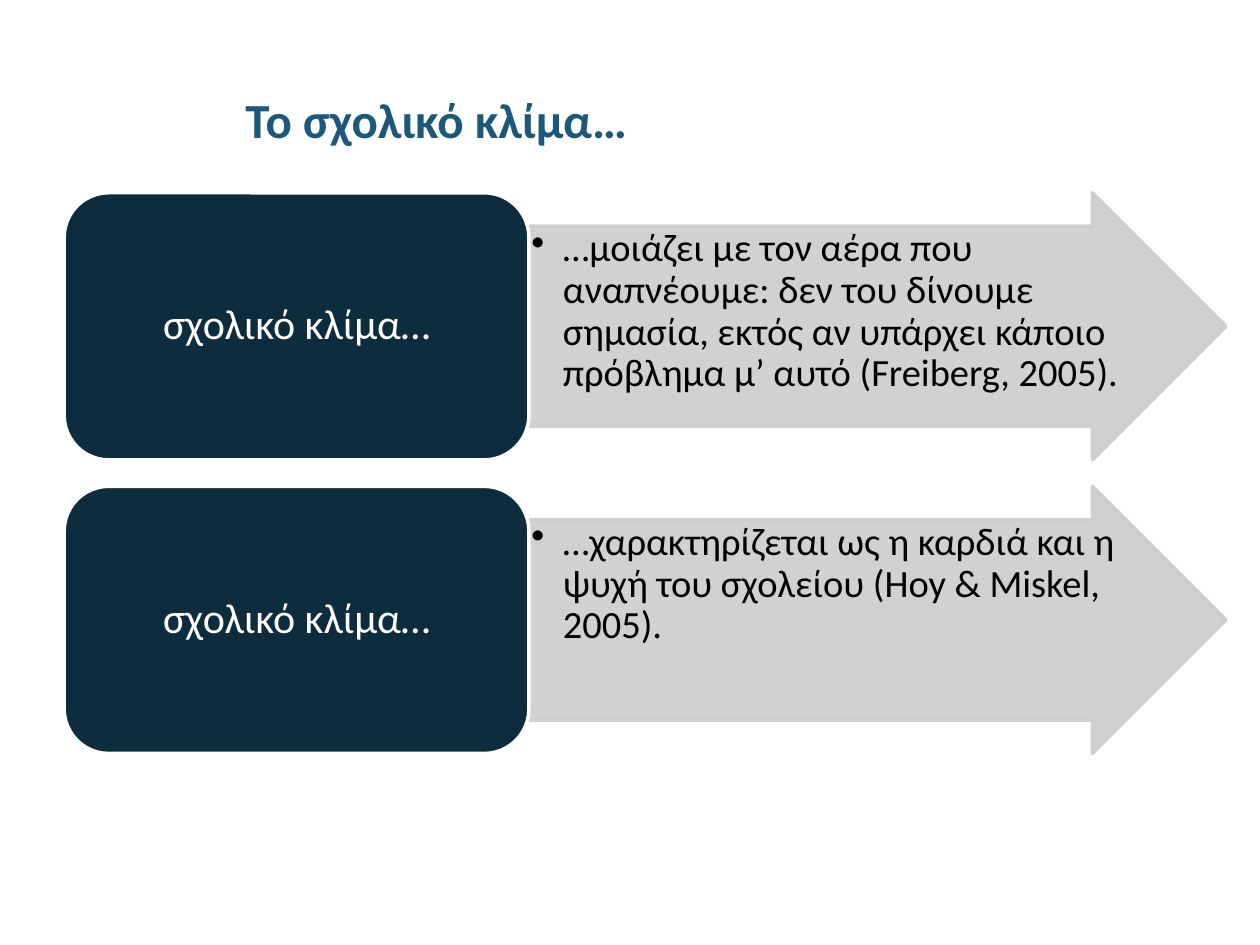
from dataclasses import dataclass
from lxml.etree import SubElement
from pptx import Presentation
from pptx.dml.color import RGBColor
from pptx.enum.shapes import MSO_SHAPE
from pptx.enum.text import MSO_ANCHOR, PP_ALIGN
from pptx.oxml.ns import qn
from pptx.util import Inches, Pt


@dataclass(frozen=True)
class Theme:
    """Hold the colours and type sizes of the slide."""
    font: str = "Calibri"
    title: str = "1B587C"
    navy: str = "0D2C3E"
    grey: str = "CCCDCE"
    white: str = "FFFFFF"
    black: str = "000000"
    head: int = 28
    label: int = 24
    body: int = 22
    edge: int = 2


THEME = Theme()
LABEL = "σχολικό κλίμα…"
ROWS = [
    "…μοιάζει με τον αέρα που αναπνέουμε: δεν του δίνουμε σημασία, "
    "εκτός αν υπάρχει κάποιο πρόβλημα μ’ αυτό (Freiberg, 2005).",
    "…χαρακτηρίζεται ως η καρδιά και η ψυχή του σχολείου (Hoy & Miskel, 2005).",
]


def write(shape, text, size, color, align, anchor, bold=False):
    """Fill a shape with one styled paragraph and return it."""
    frame = shape.text_frame
    frame.word_wrap = True
    frame.vertical_anchor = anchor
    frame.text = text
    para = frame.paragraphs[0]
    para.alignment = align
    font = para.runs[0].font
    font.name, font.size, font.bold = THEME.font, Pt(size), bold
    font.color.rgb = RGBColor.from_string(color)
    return para


def block(slide, kind, box, fill, line):
    """Add a flat preset shape."""
    shape = slide.shapes.add_shape(kind, *map(Inches, box))
    shape.shadow.inherit = False
    shape.fill.solid()
    shape.fill.fore_color.rgb = RGBColor.from_string(fill)
    shape.line.color.rgb = RGBColor.from_string(line)
    shape.line.width = Pt(THEME.edge)
    return shape


def fade(shape, share):
    """Make the fill and line of a shape partly opaque."""
    for color in shape.element.spPr.iter(qn("a:srgbClr")):
        SubElement(color, qn("a:alpha"), val=str(share * 1000))


def bullet(para, indent):
    """Give a paragraph a hanging round bullet."""
    props = para._p.get_or_add_pPr()
    props.set("marL", str(Inches(indent)))
    props.set("indent", str(-Inches(indent)))
    SubElement(props, qn("a:buChar"), char="•")


def title(slide, box, text):
    """Add the slide title."""
    shape = slide.shapes.add_textbox(*map(Inches, box))
    write(shape, text, THEME.head, THEME.title, PP_ALIGN.LEFT,
          MSO_ANCHOR.MIDDLE, True)


def row(slide, box, label, text):
    """Add a label block followed by an arrow with its statement."""
    left, top, width, height = box
    split = width * 0.4
    arrow = block(slide, MSO_SHAPE.RIGHT_ARROW,
                  (left + split, top, width - split, height),
                  THEME.grey, THEME.grey)
    arrow.adjustments[0] = 0.75
    fade(arrow, 90)
    frame = arrow.text_frame
    frame.margin_left = frame.margin_right = Inches(0.02)
    frame.margin_top = frame.margin_bottom = Inches(0.02)
    para = write(arrow, text, THEME.body, THEME.black, PP_ALIGN.LEFT,
                 MSO_ANCHOR.TOP)
    para.line_spacing = 0.9
    bullet(para, 0.25)
    card = block(slide, MSO_SHAPE.ROUNDED_RECTANGLE,
                 (left, top, split, height), THEME.navy, THEME.white)
    para = write(card, label, THEME.label, THEME.white, PP_ALIGN.CENTER,
                 MSO_ANCHOR.MIDDLE)
    para.line_spacing = 0.9


def main():
    """Build and save the slide."""
    deck = Presentation()
    deck.slide_width, deck.slide_height = Inches(10), Inches(7.5)
    slide = deck.slides.add_slide(deck.slide_layouts[6])
    title(slide, (1.85, 0.5, 6.57, 0.89), "Το σχολικό κλίμα…")
    for i, text in enumerate(ROWS):
        row(slide, (0.51, 1.53 + i * 2.33, 9.22, 2.12), LABEL, text)
    deck.save("out.pptx")


if __name__ == "__main__":
    main()
